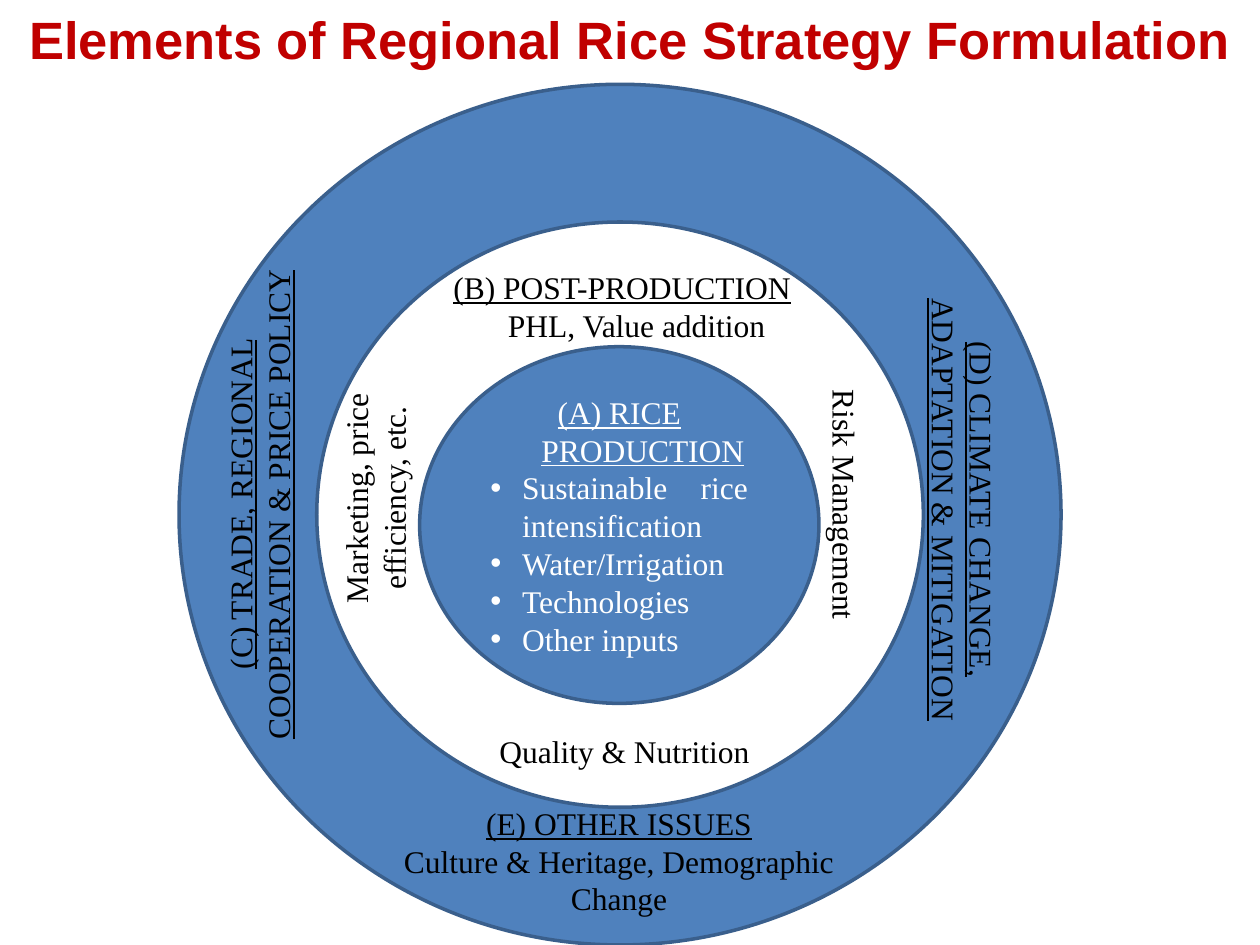
import pptx
import pptx.util
import pptx.dml.color
import pptx.enum.shapes
import pptx.enum.text
import pptx.oxml.ns
from lxml import etree

Cm = pptx.util.Cm
Pt = pptx.util.Pt
Shape = pptx.enum.shapes.MSO_SHAPE
Align = pptx.enum.text.PP_ALIGN
Mid = pptx.enum.text.MSO_ANCHOR.MIDDLE

COLORS = {"title": "C00000", "ring": "4F81BD", "edge": "3A5F8C",
          "dark": "000000", "light": "FFFFFF"}
TITLE = "Elements of Regional Rice Strategy Formulation"
RING = (3.61, 1.7, 17.78, 17.35)
CORE = (8.46, 6.99, 8.05, 7.19)
HEAD = "(A) RICE PRODUCTION"
ITEMS = ["Sustainable rice intensification", "Water/Irrigation",
         "Technologies", "Other inputs"]
POST = ("(B) POST-PRODUCTION", "PHL, Value addition")
POST_BOX = (8.89, 5.28, 7.39, 1.8)
LABELS = [
    ("", "Risk Management", (14.43, 9.7, 5.21, 1.02), 90, Align.LEFT),
    ("", "Quality & Nutrition", (9.73, 14.63, 5.72, 1.02), 0, Align.CENTER),
    ("", "Marketing, price efficiency, etc.", (4.7, 9.14, 5.72, 1.8), 270, Align.CENTER),
    ("(C) TRADE, REGIONAL COOPERATION & PRICE POLICY", "",
     (0.15, 9.27, 10.16, 1.8), 270, Align.CENTER),
    ("(D) CLIMATE CHANGE, ADAPTATION & MITIGATION", "",
     (14.86, 9.37, 9.09, 1.8), 90, Align.CENTER),
    ("(E) OTHER ISSUES", "Culture & Heritage, Demographic Change",
     (7.82, 16.08, 9.32, 2.57), 0, Align.CENTER),
]


def rgb(name):
    return pptx.dml.color.RGBColor.from_string(COLORS[name])


def place(box):
    return [Cm(n) for n in box]


def style(par, color, size=18, face="Times New Roman", bold=False, under=False):
    for run in par.runs:
        font = run.font
        font.name, font.size = face, Pt(size)
        font.bold, font.underline = bold, under
        font.color.rgb = rgb(color)


def indent(par, left, first=0, mark=None):
    props = par._p.get_or_add_pPr()
    props.set("marL", str(Cm(left)))
    props.set("indent", str(Cm(first)))
    if mark:
        font = etree.SubElement(props, pptx.oxml.ns.qn("a:buFont"))
        font.set("typeface", "Arial")
        char = etree.SubElement(props, pptx.oxml.ns.qn("a:buChar"))
        char.set("char", mark)


def disc(slide, kind, box):
    shape = slide.shapes.add_shape(kind, *place(box))
    shape.shadow.inherit = False
    shape.fill.solid()
    shape.fill.fore_color.rgb = rgb("ring")
    shape.line.color.rgb = rgb("edge")
    shape.line.width = Pt(2)
    return shape


def label(slide, head, body, box, turn, align, wrap=True):
    shape = slide.shapes.add_textbox(*place(box))
    shape.rotation = turn
    frame = shape.text_frame
    frame.word_wrap = wrap
    frame.text = "\n".join(text for text in (head, body) if text)
    for i, par in enumerate(frame.paragraphs):
        par.alignment = align
        style(par, "dark", under=bool(head) and i == 0)
    return frame


def core(slide):
    frame = disc(slide, Shape.OVAL, CORE).text_frame
    frame.word_wrap = True
    frame.vertical_anchor = Mid
    frame.text = "\n".join([HEAD] + ITEMS)
    for i, par in enumerate(frame.paragraphs):
        par.alignment = Align.JUSTIFY if i else Align.CENTER
        if i:
            indent(par, 0.64, -0.64, "•")
        else:
            indent(par, 0.95, -0.95)
        style(par, "light", under=i == 0)


def main():
    deck = pptx.Presentation()
    deck.slide_width, deck.slide_height = Cm(25.4), Cm(19.05)
    slide = deck.slides.add_slide(deck.slide_layouts[5])
    title = slide.shapes.title
    title.left, title.top, title.width, title.height = place((0, 0.2, 25.4, 1.14))
    frame = title.text_frame
    frame.text = TITLE
    frame.vertical_anchor = Mid
    frame.paragraphs[0].alignment = Align.CENTER
    style(frame.paragraphs[0], "title", 30, "Arial", bold=True)

    disc(slide, Shape.DONUT, RING).adjustments[0] = 0.16
    core(slide)
    post = label(slide, *POST, POST_BOX, 0, Align.LEFT, wrap=False)
    indent(post.paragraphs[1], 1.1)
    for item in LABELS:
        label(slide, *item)
    deck.save("out.pptx")


if __name__ == "__main__":
    main()
